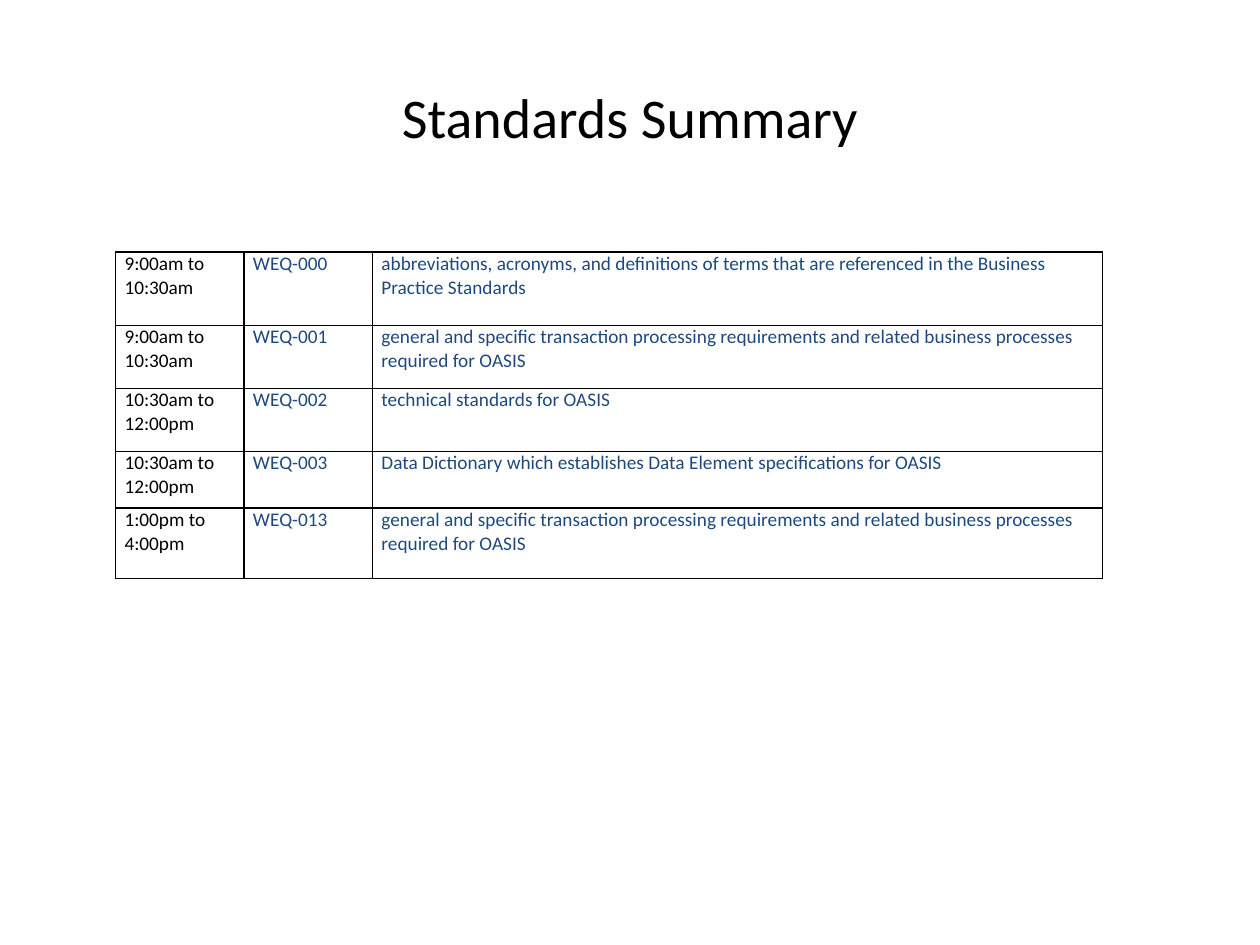
from dataclasses import dataclass

from lxml import etree
from pptx import Presentation
from pptx import util as u
from pptx.dml.color import RGBColor
from pptx.enum import text
from pptx.oxml import ns


@dataclass(frozen=True)
class Theme:
    font: str = "Calibri"
    ink: str = "000000"
    accent: str = "1F497D"
    paper: str = "FFFFFF"
    title_size: int = 32
    body_size: int = 11
    border_width: int = 1


THEME = Theme()
TITLE = "Standards Summary"
OASIS_RULES = (
    "general and specific transaction processing requirements "
    "and related business processes required for OASIS"
)
SESSIONS = [
    ("9:00am to 10:30am", "WEQ-000",
     "abbreviations, acronyms, and definitions of terms that are "
     "referenced in the Business Practice Standards"),
    ("9:00am to 10:30am", "WEQ-001", OASIS_RULES),
    ("10:30am to 12:00pm", "WEQ-002", "technical standards for OASIS"),
    ("10:30am to 12:00pm", "WEQ-003",
     "Data Dictionary which establishes Data Element specifications for OASIS"),
    ("1:00pm to 4:00pm", "WEQ-013", OASIS_RULES),
]
COLUMN_COLORS = (THEME.ink, THEME.accent, THEME.accent)
COLUMN_WIDTHS = (2.59, 2.59, 14.72)
ROW_HEIGHTS = (1.48, 1.27, 1.27, 1.14, 1.42)


def style(paragraph, size, color):
    paragraph.font.name = THEME.font
    paragraph.font.size = u.Pt(size)
    paragraph.font.color.rgb = RGBColor.from_string(color)


def add_borders(cell):
    properties = cell._tc.get_or_add_tcPr()
    for position, side in enumerate(("lnL", "lnR", "lnT", "lnB")):
        line = etree.Element(ns.qn(f"a:{side}"), w=str(u.Pt(THEME.border_width)))
        fill = etree.SubElement(line, ns.qn("a:solidFill"))
        etree.SubElement(fill, ns.qn("a:srgbClr"), val=THEME.ink)
        properties.insert(position, line)


def add_title(slide):
    heading = slide.shapes.add_textbox(u.Cm(1.27), u.Cm(0.76), u.Cm(22.86), u.Cm(3.18))
    frame = heading.text_frame
    frame.word_wrap = True
    frame.vertical_anchor = text.MSO_ANCHOR.MIDDLE
    frame.text = TITLE
    frame.paragraphs[0].alignment = text.PP_ALIGN.CENTER
    style(frame.paragraphs[0], THEME.title_size, THEME.ink)


def add_schedule(slide):
    schedule = slide.shapes.add_table(
        len(SESSIONS), len(COLUMN_WIDTHS), u.Cm(2.33), u.Cm(5.08),
        u.Cm(sum(COLUMN_WIDTHS)), u.Cm(sum(ROW_HEIGHTS)),
    ).table
    schedule.first_row = False
    schedule.horz_banding = False
    for column, width in zip(schedule.columns, COLUMN_WIDTHS):
        column.width = u.Cm(width)
    for row, height, session in zip(schedule.rows, ROW_HEIGHTS, SESSIONS):
        row.height = u.Cm(height)
        for cell, words, color in zip(row.cells, session, COLUMN_COLORS):
            cell.text = words
            cell.margin_left = cell.margin_right = u.Cm(0.18)
            cell.margin_top = cell.margin_bottom = 0
            cell.fill.solid()
            cell.fill.fore_color.rgb = RGBColor.from_string(THEME.paper)
            style(cell.text_frame.paragraphs[0], THEME.body_size, color)
            add_borders(cell)


def main():
    deck = Presentation()
    deck.slide_width, deck.slide_height = u.Cm(25.4), u.Cm(19.05)
    slide = deck.slides.add_slide(deck.slide_layouts[6])
    add_title(slide)
    add_schedule(slide)
    deck.save("out.pptx")


if __name__ == "__main__":
    main()
